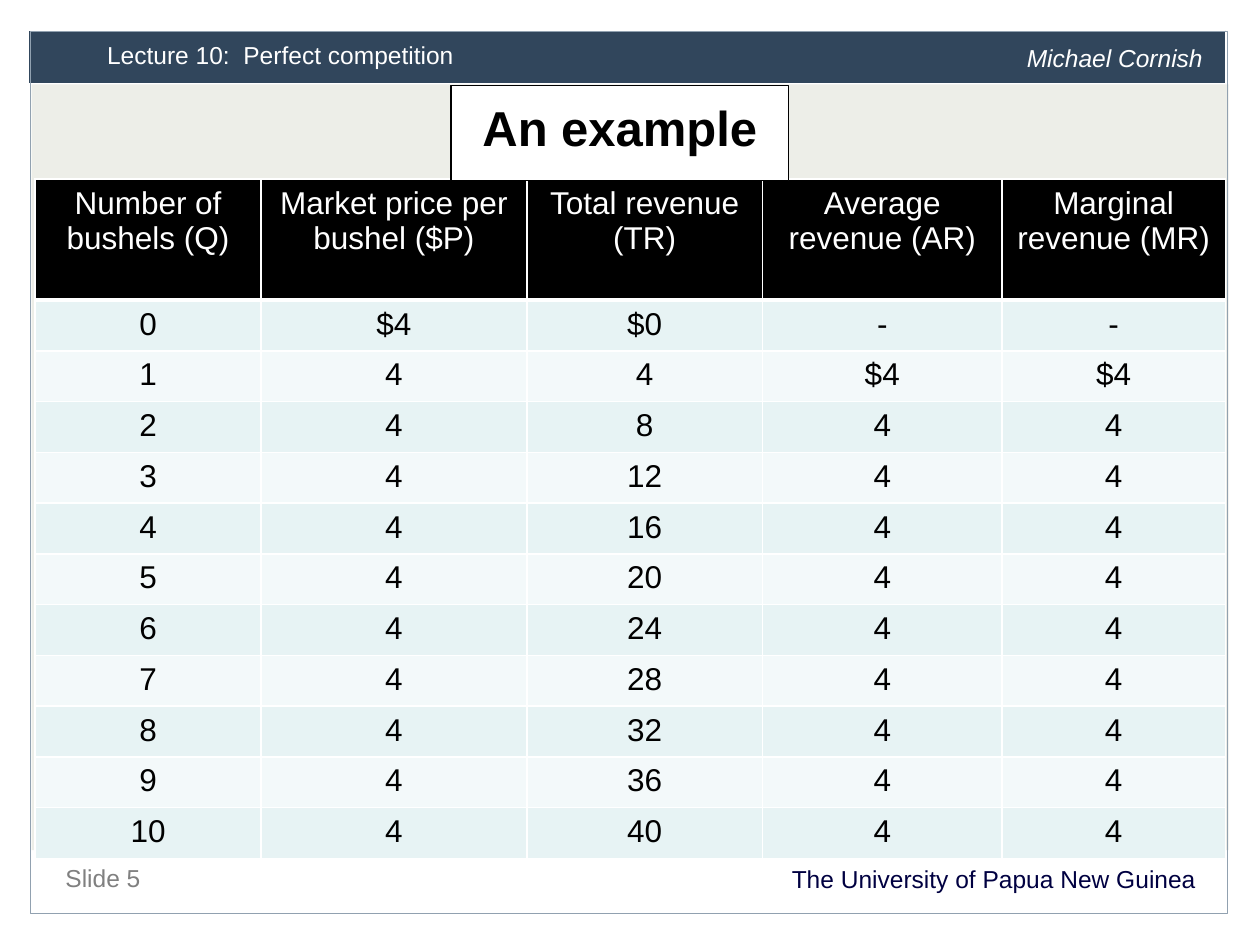
from dataclasses import dataclass
from lxml.etree import SubElement
from pptx import Presentation
from pptx.dml.color import RGBColor
from pptx.enum.shapes import MSO_SHAPE as Shape
from pptx.enum.text import MSO_ANCHOR as Anchor, PP_ALIGN as Align
from pptx.oxml.ns import qn
from pptx.util import Cm, Pt


@dataclass(frozen=True)
class Theme:
    font: str = "Arial"
    white: str = "FFFFFF"
    black: str = "000000"
    panel: str = "EDEEE8"
    banner: str = "31465C"
    frame: str = "91A1B0"
    navy: str = "000041"
    grey: str = "808080"
    bands: tuple = ("E7F3F4", "F3F9FA")
    title_size: int = 28
    table_size: int = 18
    small_size: int = 14


THEME = Theme()
HEADINGS = [
    "Number of bushels (Q)",
    "Market price per bushel ($P)",
    "Total revenue (TR)",
    "Average revenue (AR)",
    "Marginal revenue (MR)",
]
PRICE = 4
COLUMN_WIDTHS = [4.55, 5.36, 4.75, 4.83, 4.5]
HEADING_HEIGHT, ROW_HEIGHT = 2.44, 1.02


def colour(code):
    return RGBColor.from_string(code)


def lengths(*values):
    return [Cm(value) for value in values]


def write(frame, text, size, ink, align=Align.LEFT, spacing=None, bold=False, italic=False):
    para = frame.paragraphs[0]
    para.alignment = align
    if spacing:
        para.line_spacing = Pt(spacing)
    span = para.add_run()
    span.text = text
    span.font.name = THEME.font
    span.font.size = Pt(size)
    span.font.color.rgb = colour(ink)
    span.font.bold = bold
    span.font.italic = italic


def paint(shape, fill=None, line=None, width=0.75):
    if fill:
        shape.fill.solid()
        shape.fill.fore_color.rgb = colour(fill)
    else:
        shape.fill.background()
    if line:
        shape.line.color.rgb = colour(line)
        shape.line.width = Pt(width)
    else:
        shape.line.fill.background()


def add_panel(page, place, **style):
    panel = page.shapes.add_shape(Shape.RECTANGLE, *lengths(*place))
    panel.shadow.inherit = False
    paint(panel, **style)


def add_label(page, place, text, ink, spacing, **style):
    box = page.shapes.add_textbox(*lengths(*place))
    box.text_frame.word_wrap = True
    write(box.text_frame, text, THEME.small_size, ink, spacing=spacing, **style)


def add_border(cell, side, width):
    line = SubElement(cell._tc.get_or_add_tcPr(), qn(f"a:{side}"), w=str(Pt(width)))
    fill = SubElement(line, qn("a:solidFill"))
    SubElement(fill, qn("a:srgbClr"), val=THEME.white)


def format_cell(cell, text, fill, ink, bottom):
    cell.margin_left = cell.margin_right = Cm(0.28)
    cell.margin_top = cell.margin_bottom = Cm(0.13)
    for side, width in (("lnL", 1), ("lnR", 1), ("lnT", 1), ("lnB", bottom)):
        add_border(cell, side, width)
    cell.fill.solid()
    cell.fill.fore_color.rgb = colour(fill)
    write(cell.text_frame, text, THEME.table_size, ink, Align.CENTER)


def revenue_rows():
    rows = [["0", f"${PRICE}", "$0", "-", "-"]]
    for quantity in range(1, 11):
        average = f"${PRICE}" if quantity == 1 else str(PRICE)
        rows.append([str(quantity), str(PRICE), str(quantity * PRICE), average, average])
    return rows


def add_revenue_table(page):
    rows = [HEADINGS, *revenue_rows()]
    heights = [HEADING_HEIGHT] + [ROW_HEIGHT] * (len(rows) - 1)
    place = lengths(0.71, 3.61, sum(COLUMN_WIDTHS), sum(heights))
    table = page.shapes.add_table(len(rows), len(HEADINGS), *place).table
    for column, width in zip(table.columns, COLUMN_WIDTHS):
        column.width = Cm(width)
    for index, (values, height) in enumerate(zip(rows, heights)):
        table.rows[index].height = Cm(height)
        if index == 0:
            fill, ink, bottom = THEME.black, THEME.white, 3
        else:
            fill, ink, bottom = THEME.bands[(index - 1) % 2], THEME.black, 1
        for position, text in enumerate(values):
            format_cell(table.cell(index, position), text, fill, ink, bottom)


def place_title(page, text):
    title = page.shapes.title
    title.left, title.top, title.width, title.height = lengths(9.09, 1.73, 6.81, 1.91)
    paint(title, fill=THEME.white, line=THEME.black)
    title.text_frame.vertical_anchor = Anchor.MIDDLE
    write(title.text_frame, text, THEME.title_size, THEME.black, Align.CENTER, 26, bold=True)
    page.shapes._spTree.append(title._element)


def main():
    deck = Presentation()
    deck.slide_width, deck.slide_height = lengths(25.4, 19.05)
    page = deck.slides.add_slide(deck.slide_layouts[5])
    add_panel(page, (0.64, 1.7, 24.13, 15.44), fill=THEME.panel)
    add_panel(page, (0.58, 0.61, 24.13, 1.07), fill=THEME.banner, line=THEME.white, width=0.5)
    add_label(page, (1.07, 17.35, 23.29, 0.81), "The University of Papua New Guinea",
              THEME.navy, 15, align=Align.RIGHT)
    add_label(page, (1.07, 17.15, 11, 0.86), "Slide 5", THEME.grey, 20)
    add_label(page, (1.91, 0.64, 15.57, 0.94), "Lecture 10:  Perfect competition", THEME.white, 18)
    add_panel(page, (0.61, 0.64, 24.13, 17.78), line=THEME.frame)
    add_label(page, (20.45, 0.71, 4.17, 0.94), "Michael Cornish", THEME.white, 18, italic=True)
    add_revenue_table(page)
    place_title(page, "An example")
    deck.save("out.pptx")


if __name__ == "__main__":
    main()
